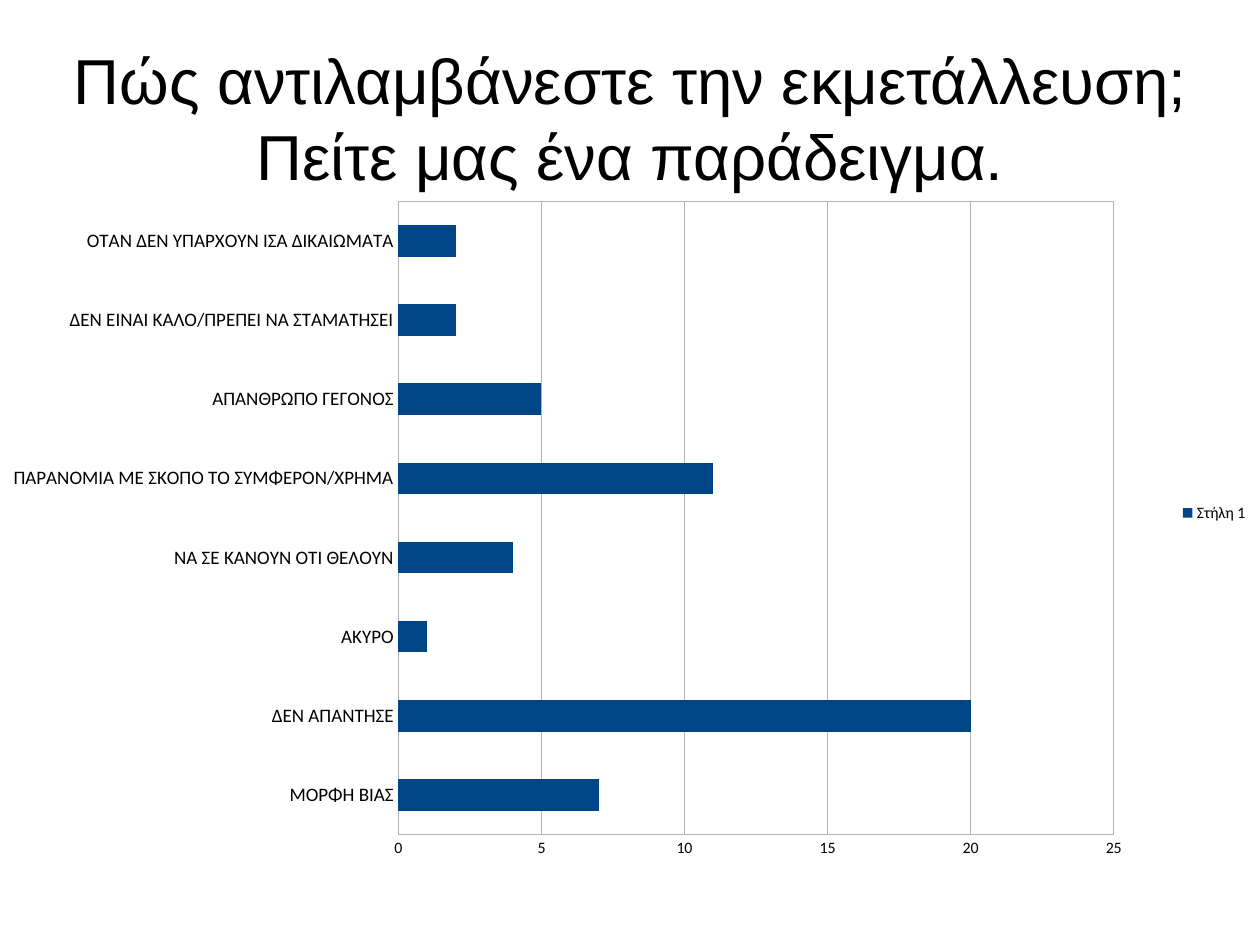
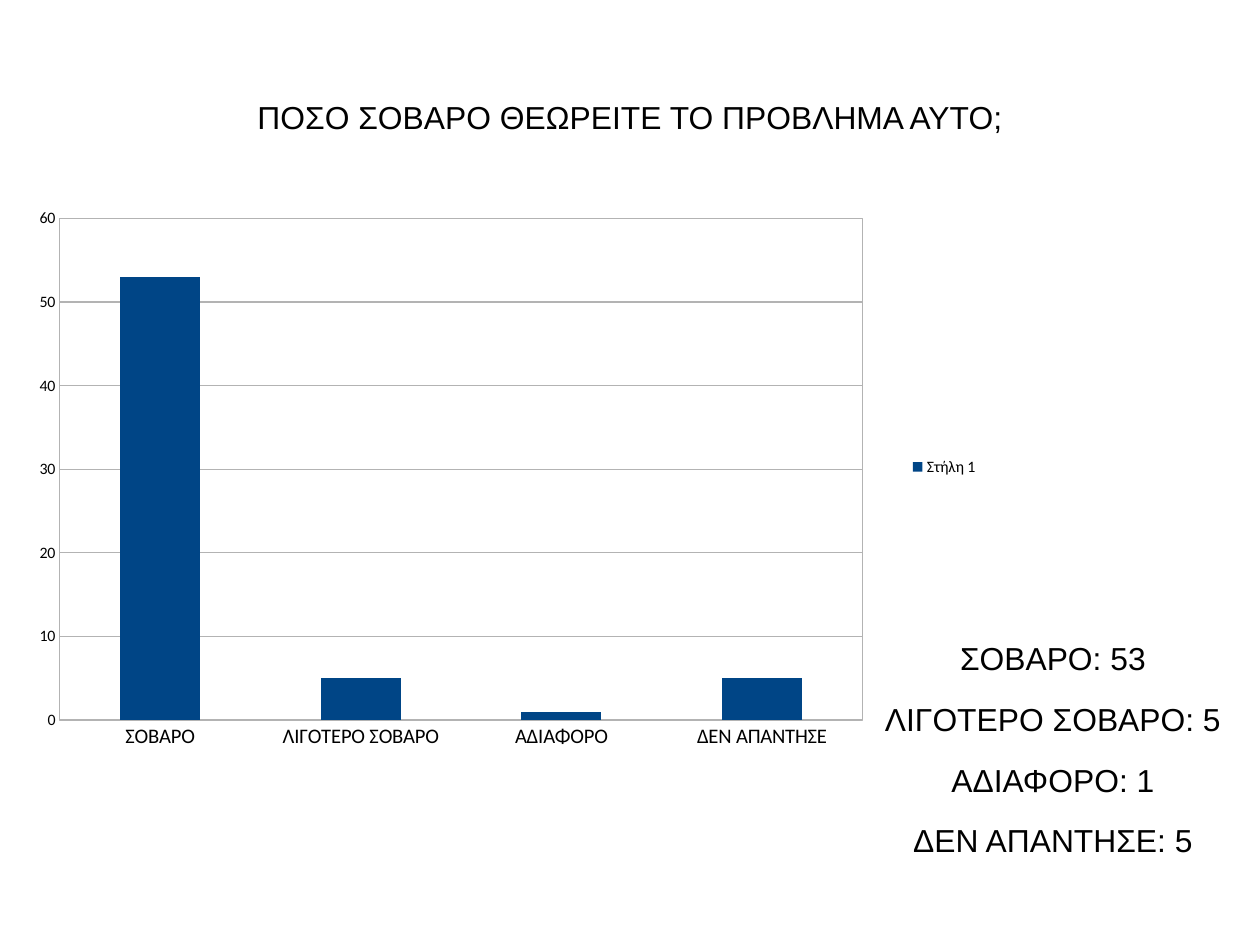
import pptx
import pptx.chart.data
import pptx.dml.color
import pptx.enum.chart
import pptx.enum.text
import pptx.oxml
import pptx.oxml.ns
import pptx.util

BLACK = pptx.dml.color.RGBColor(0x00, 0x00, 0x00)
BLUE = pptx.dml.color.RGBColor(0x00, 0x45, 0x86)
GREY = pptx.dml.color.RGBColor(0xB3, 0xB3, 0xB3)
TEXT_FONT, CHART_FONT = "Arial", "Calibri"

PX = 8000  # EMU: 45 px to the centimetre
PAGE_SIZE = (1260, 945)
TITLE_BOX = (63, 38, 1134, 158)
COUNTS_BOX = (882, 639, 342, 220)

SERIES_NAME = "Στήλη 1"
CHART_TYPES = pptx.enum.chart.XL_CHART_TYPE

SLIDES = [
    {
        "title": "Πώς αντιλαμβάνεστε την εκμετάλλευση; Πείτε μας ένα παράδειγμα.",
        "title_size": 40,
        "type": CHART_TYPES.BAR_CLUSTERED,
        "box": (-33, 135, 1293, 756),
        "plot": (0.036, 0.088, 0.857, 0.867),
        "label_size": 12,
        "maximum": 25,
        "step": 5,
        "list_counts": False,
        "answers": [
            ("ΜΟΡΦΗ ΒΙΑΣ", 7),
            ("ΔΕΝ ΑΠΑΝΤΗΣΕ", 20),
            ("ΑΚΥΡΟ", 1),
            ("ΝΑ ΣΕ ΚΑΝΟΥΝ ΟΤΙ ΘΕΛΟΥΝ", 4),
            ("ΠΑΡΑΝΟΜΙΑ ΜΕ ΣΚΟΠΟ ΤΟ ΣΥΜΦΕΡΟΝ/ΧΡΗΜΑ", 11),
            ("ΑΠΑΝΘΡΩΠΟ ΓΕΓΟΝΟΣ", 5),
            ("ΔΕΝ ΕΙΝΑΙ ΚΑΛΟ/ΠΡΕΠΕΙ ΝΑ ΣΤΑΜΑΤΗΣΕΙ", 2),
            ("ΟΤΑΝ ΔΕΝ ΥΠΑΡΧΟΥΝ ΙΣΑ ΔΙΚΑΙΩΜΑΤΑ", 2),
        ],
    },
    {
        "title": "ΠΟΣΟ ΣΟΒΑΡΟ ΘΕΩΡΕΙΤΕ ΤΟ ΠΡΟΒΛΗΜΑ ΑΥΤΟ;",
        "title_size": 20,
        "type": CHART_TYPES.COLUMN_CLUSTERED,
        "box": (0, 153, 990, 628),
        "plot": (0.04, 0.09, 0.831, 0.86),
        "label_size": 13,
        "maximum": 60,
        "step": 10,
        "list_counts": True,
        "answers": [
            ("ΣΟΒΑΡΟ", 53),
            ("ΛΙΓΟΤΕΡΟ ΣΟΒΑΡΟ", 5),
            ("ΑΔΙΑΦΟΡΟ", 1),
            ("ΔΕΝ ΑΠΑΝΤΗΣΕ", 5),
        ],
    },
]


def emu(lengths):
    return [length * PX for length in lengths]


def style_font(font, name, size):
    font.name, font.size = name, pptx.util.Pt(size)
    font.color.rgb = BLACK


def style_line(line):
    line.color.rgb = GREY
    line.width = pptx.util.Pt(0.75)


def add_text(page, box, lines, size, space_after=0):
    frame = page.shapes.add_textbox(*emu(box)).text_frame
    frame.word_wrap = True
    frame.vertical_anchor = pptx.enum.text.MSO_ANCHOR.MIDDLE
    frame.margin_left = frame.margin_right = 0
    frame.margin_top = frame.margin_bottom = 0
    frame.text = "\n".join(lines)
    for para in frame.paragraphs:
        para.alignment = pptx.enum.text.PP_ALIGN.CENTER
        para.space_after = pptx.util.Pt(space_after)
        style_font(para.font, TEXT_FONT, size)


def frame_plot(chart, plot_box):
    """Place the plot area, labels included, and give it a grey border."""
    area = chart.plots[0]._element.getparent()
    for old in area.findall(pptx.oxml.ns.qn("c:layout")):
        area.remove(old)
    modes = '<c:layoutTarget val="outer"/><c:xMode val="edge"/><c:yMode val="edge"/>'
    sizes = "".join(f'<c:{key} val="{value}"/>' for key, value in zip("xywh", plot_box))
    area.insert(0, pptx.oxml.parse_xml(
        f'<c:layout {pptx.oxml.ns.nsdecls("c")}>'
        f"<c:manualLayout>{modes}{sizes}</c:manualLayout></c:layout>"))
    area.append(pptx.oxml.parse_xml(
        f'<c:spPr {pptx.oxml.ns.nsdecls("c", "a")}><a:noFill/><a:ln w="9525">'
        f'<a:solidFill><a:srgbClr val="{GREY}"/></a:solidFill></a:ln></c:spPr>'))


def add_answer_chart(page, content):
    data = pptx.chart.data.CategoryChartData()
    data.categories = [answer for answer, count in content["answers"]]
    data.add_series(SERIES_NAME, [count for answer, count in content["answers"]])
    chart = page.shapes.add_chart(content["type"], *emu(content["box"]), data).chart
    chart.has_title = False
    style_font(chart.font, CHART_FONT, 10)

    chart.has_legend = True
    chart.legend.position = pptx.enum.chart.XL_LEGEND_POSITION.RIGHT
    chart.legend.include_in_layout = False
    style_font(chart.legend.font, CHART_FONT, 10)

    bars = chart.plots[0]
    bars.gap_width = 150
    bars.vary_by_categories = False
    bars.series[0].format.fill.solid()
    bars.series[0].format.fill.fore_color.rgb = BLUE

    answers, counts = chart.category_axis, chart.value_axis
    for axis, size in ((answers, content["label_size"]), (counts, 10)):
        axis.major_tick_mark = pptx.enum.chart.XL_TICK_MARK.NONE
        axis.minor_tick_mark = pptx.enum.chart.XL_TICK_MARK.NONE
        style_font(axis.tick_labels.font, CHART_FONT, size)
        style_line(axis.format.line)
    answers.has_major_gridlines = False
    counts.has_major_gridlines = True
    style_line(counts.major_gridlines.format.line)
    counts.minimum_scale, counts.maximum_scale = 0, content["maximum"]
    counts.major_unit = content["step"]
    frame_plot(chart, content["plot"])


def main():
    deck = pptx.Presentation()
    deck.slide_width, deck.slide_height = emu(PAGE_SIZE)
    for content in SLIDES:
        page = deck.slides.add_slide(deck.slide_layouts[6])
        add_text(page, TITLE_BOX, [content["title"]], content["title_size"])
        add_answer_chart(page, content)
        if content["list_counts"]:
            lines = [f"{answer}: {count}" for answer, count in content["answers"]]
            add_text(page, COUNTS_BOX, lines, 20, space_after=14.2)
    deck.save("out.pptx")


if __name__ == "__main__":
    main()
